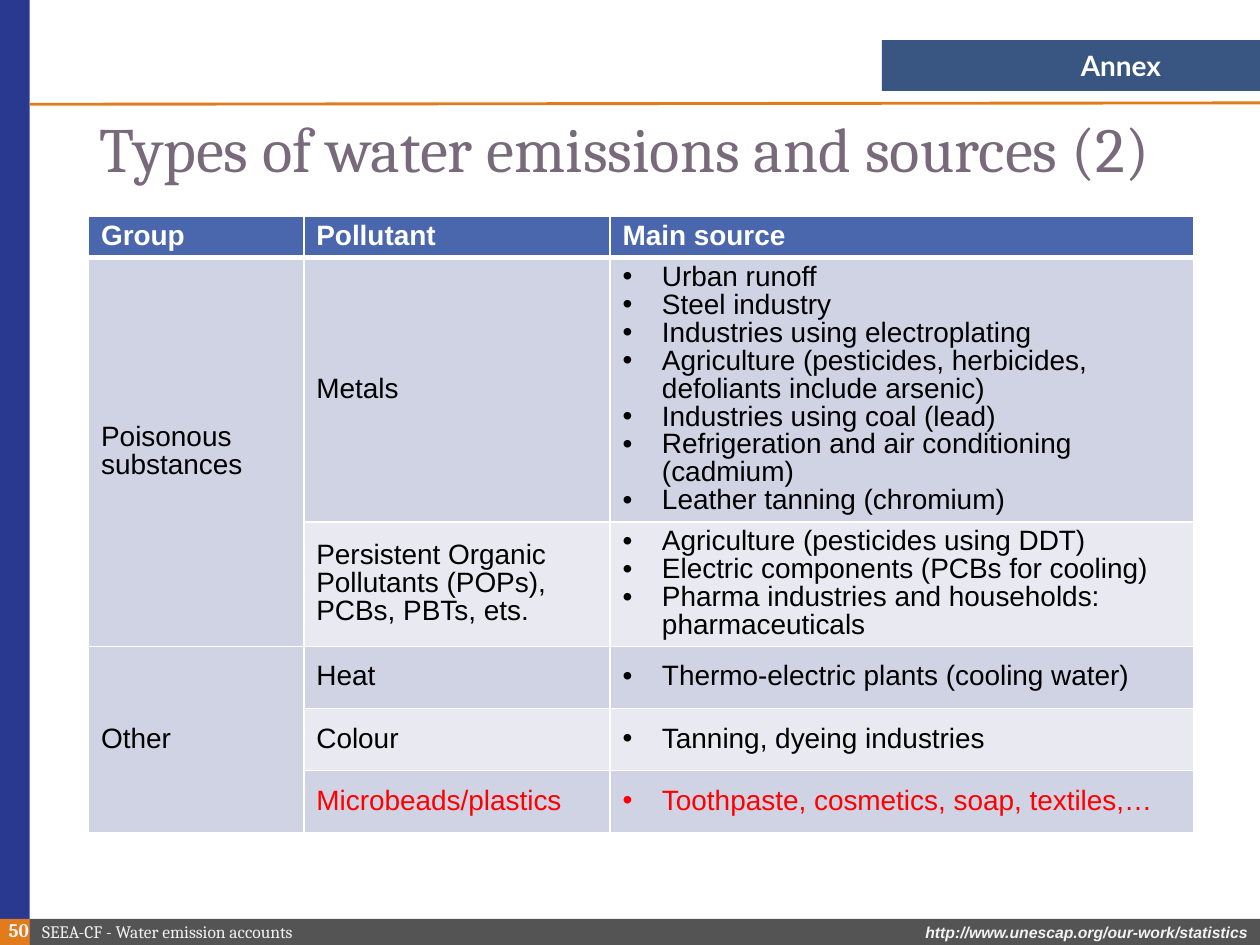
from pptx import Presentation
from pptx import util as u
from pptx.dml import color
from pptx.enum import shapes, text
from pptx.oxml import ns, xmlchemy

Pt = u.Pt
WHITE, PALE, ORANGE, RED = "FFFFFF", "F2F2F2", "E17B1C", "FF0000"
HEADER, BAND_DARK, BAND_LIGHT = "4A66AC", "D0D3E3", "E9EAF1"

COLUMN_WIDTHS = [123, 175, 333.5]
ROW_HEIGHTS = [23.3, 151.2, 71.2, 35.5, 35.5, 35.5]
HEADINGS = ["Group", "Pollutant", "Main source"]
# Group, then its pollutants with their main sources
GROUPS = [
    ("Poisonous substances", [
        ("Metals", [
            "Urban runoff",
            "Steel industry",
            "Industries using electroplating",
            "Agriculture (pesticides, herbicides, defoliants include arsenic)",
            "Industries using coal (lead)",
            "Refrigeration and air conditioning (cadmium)",
            "Leather tanning (chromium)",
        ]),
        ("Persistent Organic Pollutants (POPs), PCBs, PBTs, ets.", [
            "Agriculture (pesticides using DDT)",
            "Electric components (PCBs for cooling)",
            "Pharma industries and households: pharmaceuticals",
        ]),
    ]),
    ("Other", [
        ("Heat", ["Thermo-electric plants (cooling water)"]),
        ("Colour", ["Tanning, dyeing industries"]),
        ("Microbeads/plastics", ["Toothpaste, cosmetics, soap, textiles,…"]),
    ]),
]


def rgb(hex_color):
    return color.RGBColor.from_string(hex_color)


def add_child(parent, tag, **attributes):
    child = xmlchemy.OxmlElement(tag)
    for name, value in attributes.items():
        child.set(name, str(value))
    parent.append(child)
    return child


def style(p, size, hex_color, name="Arial", bold=False, italic=False):
    font = p.font
    font.size, font.name, font.bold, font.italic = Pt(size), name, bold, italic
    font.color.rgb = rgb(hex_color)


def add_bar(s, x, y, w, h, hex_color, opacity=None):
    sp = s.shapes.add_shape(shapes.MSO_SHAPE.RECTANGLE, Pt(x), Pt(y), Pt(w), Pt(h))
    sp.shadow.inherit = False
    sp.fill.solid()
    sp.fill.fore_color.rgb = rgb(hex_color)
    sp.line.fill.background()
    if opacity is not None:
        fill_color = sp.fill._xPr.find(".//" + ns.qn("a:srgbClr"))
        add_child(fill_color, "a:alpha", val=opacity * 1000)


def add_rule(s, x1, y1, x2, y2, hex_color, width):
    line = s.shapes.add_connector(
        shapes.MSO_CONNECTOR.STRAIGHT, Pt(x1), Pt(y1), Pt(x2), Pt(y2))
    line.line.color.rgb = rgb(hex_color)
    line.line.width = Pt(width)
    add_child(line._element.spPr, "a:effectLst")


def add_label(s, x, y, w, h, label, size, hex_color, right=True, middle=True, **font):
    tf = s.shapes.add_textbox(Pt(x), Pt(y), Pt(w), Pt(h)).text_frame
    tf.word_wrap = True
    tf.vertical_anchor = text.MSO_ANCHOR.MIDDLE if middle else text.MSO_ANCHOR.TOP
    p = tf.paragraphs[0]
    p.text = label
    p.alignment = text.PP_ALIGN.RIGHT if right else text.PP_ALIGN.LEFT
    style(p, size, hex_color, **font)


def add_title(s, title):
    sp = s.shapes.title
    sp.left, sp.top, sp.width, sp.height = Pt(49.7), Pt(64), Pt(645), Pt(64)
    tf = sp.text_frame
    tf.text = title
    tf.auto_size = text.MSO_AUTO_SIZE.NONE
    tf.vertical_anchor = text.MSO_ANCHOR.TOP
    p = tf.paragraphs[0]
    p.alignment = text.PP_ALIGN.LEFT
    p.line_spacing = 0.9
    style(p, 36, "78697B", "Cambria")


def add_bullet(p):
    pPr = p._p.get_or_add_pPr()
    pPr.set("marL", str(Pt(22.5)))
    pPr.set("indent", str(-Pt(22.5)))
    add_child(pPr, "a:buFont", typeface="Arial")
    add_child(pPr, "a:buChar", char="•")


def add_borders(cell, bottom):
    tcPr = cell._tc.get_or_add_tcPr()
    for side, width in (("L", 1), ("R", 1), ("T", 1), ("B", bottom)):
        line = add_child(tcPr, "a:ln" + side, w=Pt(width))
        add_child(add_child(line, "a:solidFill"), "a:srgbClr", val=WHITE)


def fill_cell(cell, lines, fill, hex_color="000000", header=False, bullets=False):
    add_borders(cell, 3 if header else 1)
    cell.fill.solid()
    cell.fill.fore_color.rgb = rgb(fill)
    cell.vertical_anchor = text.MSO_ANCHOR.MIDDLE
    tf = cell.text_frame
    tf.text = "\n".join(lines)
    for p in tf.paragraphs:
        p.line_spacing = 0.9
        if bullets:
            add_bullet(p)
        style(p, 16, hex_color, bold=header)


def add_emissions_table(s):
    table = s.shapes.add_table(
        len(ROW_HEIGHTS), len(COLUMN_WIDTHS), Pt(50.6), Pt(123.8),
        Pt(sum(COLUMN_WIDTHS)), Pt(sum(ROW_HEIGHTS))).table
    for column, width in zip(table.columns, COLUMN_WIDTHS):
        column.width = Pt(width)
    for row, height in zip(table.rows, ROW_HEIGHTS):
        row.height = Pt(height)
    for c, heading in enumerate(HEADINGS):
        fill_cell(table.cell(0, c), [heading], HEADER, WHITE, header=True)

    r = 1
    for group, pollutants in GROUPS:
        first = r
        for pollutant, sources in pollutants:
            band = BAND_DARK if r % 2 else BAND_LIGHT
            ink = RED if pollutant.startswith("Microbeads") else "000000"
            fill_cell(table.cell(r, 0), [group] if r == first else [], BAND_DARK)
            fill_cell(table.cell(r, 1), [pollutant], band, ink)
            fill_cell(table.cell(r, 2), sources, band, ink, bullets=True)
            r += 1
        table.cell(first, 0).merge(table.cell(r - 1, 0))


def main():
    prs = Presentation()
    prs.slide_width, prs.slide_height = Pt(720), Pt(540)
    s = prs.slides.add_slide(prs.slide_layouts[5])

    add_bar(s, 504, 23, 216, 29, "072C62", opacity=80)
    add_bar(s, 17, 525, 703, 15, "545454")
    add_bar(s, 0, 0, 17, 540, "2A3990")
    add_bar(s, 0, 525, 17, 15, ORANGE)
    add_rule(s, 17, 59.6, 720, 58.8, ORANGE, 1.65)

    add_title(s, "Types of water emissions and sources (2)")
    add_emissions_table(s)

    add_label(s, 504, 24, 166.5, 26.6, "Annex", 16, WHITE, name="Lato", bold=True)
    add_label(s, 450.5, 524, 269.5, 18, "http://www.unescap.org/our-work/statistics",
              9, PALE, middle=False, bold=True, italic=True)
    add_label(s, 17, 525, 215, 14.5, "SEEA-CF - Water emission accounts",
              10, PALE, right=False, name="Cambria")
    add_label(s, -5, 520, 28.6, 22.5, "50", 11, PALE, name="Cambria", bold=True)

    prs.save("out.pptx")


if __name__ == "__main__":
    main()
